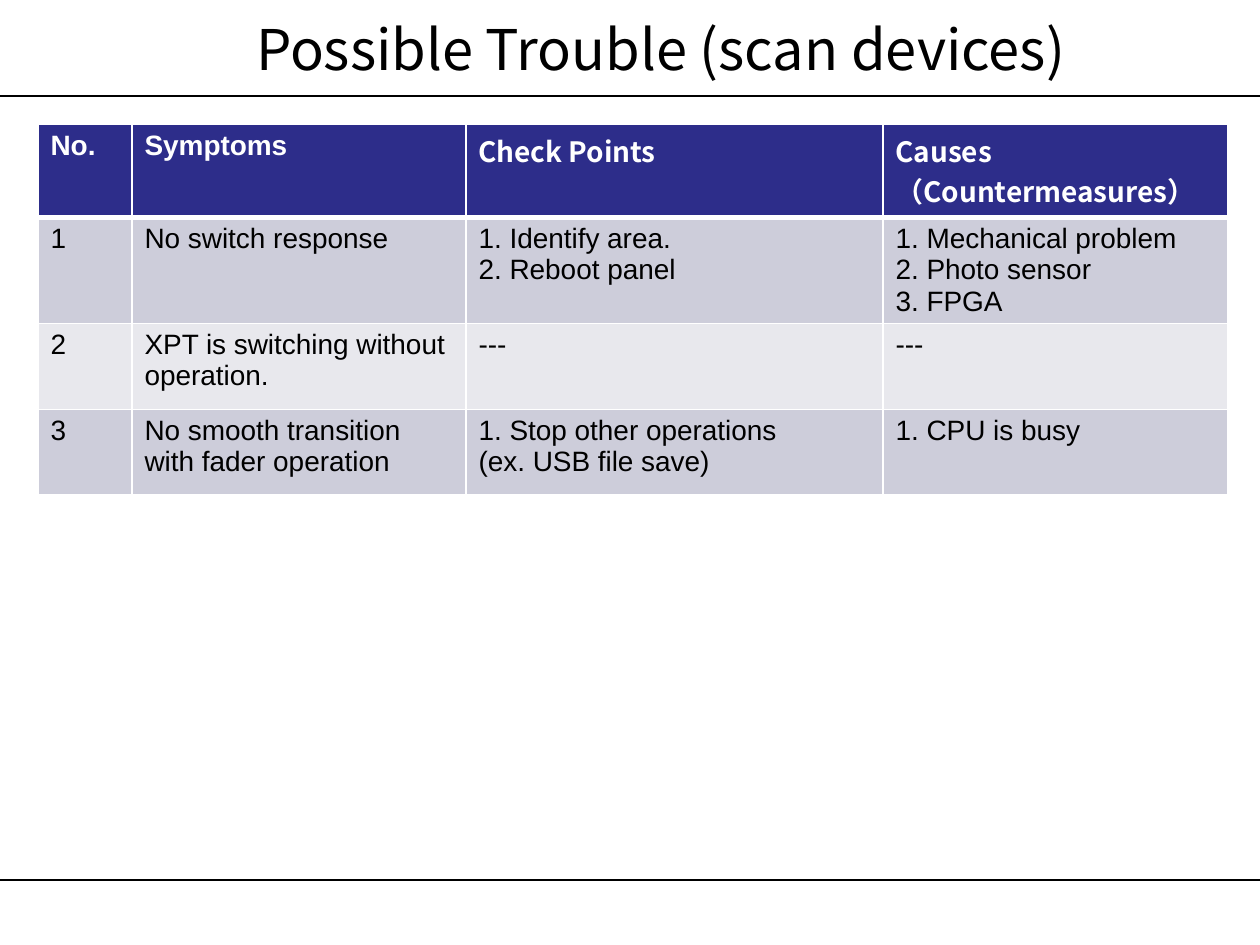
from lxml.etree import SubElement
from pptx import Presentation
from pptx.dml.color import RGBColor
from pptx.enum.shapes import MSO_CONNECTOR
from pptx.enum.text import MSO_ANCHOR, MSO_AUTO_SIZE, PP_ALIGN
from pptx.oxml.ns import qn
from pptx.util import Emu, Pt

TITLE = "Possible Trouble (scan devices)"
ROWS = [
    ["No.", "Symptoms", "Check Points", "Causes\n（Countermeasures）"],
    ["1", "No switch response", "1. Identify area.\n2. Reboot panel",
     "1. Mechanical problem\n2. Photo sensor\n3. FPGA"],
    ["2", "XPT is switching without operation.", "---", "---"],
    ["3", "No smooth transition with fader operation",
     "1. Stop other operations\n(ex. USB file save)", "1. CPU is busy"],
]
COLUMN_WIDTHS = [94, 334, 417, 345]
ROW_HEIGHTS = [92, 106, 86, 86]
TABLE_LEFT, TABLE_TOP = 38, 124
SLIDE_WIDTH, SLIDE_HEIGHT = 1260, 945
RULE_HEIGHTS = [880, 96]
HANGING_CELL = (1, 2)
HANGING_INDENT = 48
SANS, DISPLAY = "Arial", "Noto Sans CJK JP"
BLACK, WHITE, NAVY = "000000", "FFFFFF", "2D2D8A"
BANDS = ["E8E8ED", "CDCDDA"]


def px(value):
    return Emu(value * 914400 // 126)


def color(value):
    return RGBColor.from_string(value)


def write(frame, text, size=16, font=SANS, fill=BLACK, bold=False,
          align=PP_ALIGN.LEFT, hanging=0):
    frame.word_wrap = True
    for index, line in enumerate(text.split("\n")):
        paragraph = frame.paragraphs[0] if index == 0 else frame.add_paragraph()
        paragraph.alignment = align
        if hanging:
            properties = paragraph._p.get_or_add_pPr()
            properties.set("marL", str(px(hanging)))
            properties.set("indent", str(-px(hanging)))
        run = paragraph.add_run()
        run.text = line
        run.font.size = Pt(size)
        run.font.bold = bold
        run.font.color.rgb = color(fill)
        run.font.name = font
        SubElement(run._r.get_or_add_rPr(), qn("a:ea"), typeface=DISPLAY)


def add_rule(slide, top):
    rule = slide.shapes.add_connector(
        MSO_CONNECTOR.STRAIGHT, 0, px(top), px(SLIDE_WIDTH), px(top))
    rule.line.color.rgb = color(BLACK)
    rule.line.width = Pt(0.75)
    SubElement(rule._element.spPr, qn("a:effectLst"))


def style_cell(cell, fill, borders):
    properties = cell._tc.get_or_add_tcPr()
    for side, width in borders.items():
        border = SubElement(properties, qn(f"a:ln{side}"), w=str(Pt(width)))
        SubElement(SubElement(border, qn("a:solidFill")), qn("a:srgbClr"), val=WHITE)
    cell.fill.solid()
    cell.fill.fore_color.rgb = color(fill)


def add_trouble_table(slide):
    table = slide.shapes.add_table(
        len(ROWS), len(COLUMN_WIDTHS), px(TABLE_LEFT), px(TABLE_TOP),
        px(sum(COLUMN_WIDTHS)), px(sum(ROW_HEIGHTS))).table
    for column, width in zip(table.columns, COLUMN_WIDTHS):
        column.width = px(width)
    for row_index, (texts, height) in enumerate(zip(ROWS, ROW_HEIGHTS)):
        table.rows[row_index].height = px(height)
        header = row_index == 0
        borders = {"L": 1, "R": 1, "T": 3 if row_index == 1 else 1,
                   "B": 3 if header else 1}
        for column_index, text in enumerate(texts):
            cell = table.cell(row_index, column_index)
            style_cell(cell, NAVY if header else BANDS[row_index % 2], borders)
            hanging = HANGING_INDENT if (row_index, column_index) == HANGING_CELL else 0
            write(cell.text_frame, text, bold=header, hanging=hanging,
                  fill=WHITE if header else BLACK,
                  font=DISPLAY if header and column_index > 1 else SANS)


def main():
    presentation = Presentation()
    presentation.slide_width = px(SLIDE_WIDTH)
    presentation.slide_height = px(SLIDE_HEIGHT)
    slide = presentation.slides.add_slide(presentation.slide_layouts[5])
    for top in RULE_HEIGHTS:
        add_rule(slide, top)
    title = slide.shapes.title
    title.left, title.top, title.width, title.height = px(94), px(0), px(1134), px(96)
    title.text_frame.auto_size = MSO_AUTO_SIZE.NONE
    title.text_frame.vertical_anchor = MSO_ANCHOR.MIDDLE
    write(title.text_frame, TITLE, size=32, font=DISPLAY, align=PP_ALIGN.CENTER)
    add_trouble_table(slide)
    presentation.save("out.pptx")


if __name__ == "__main__":
    main()
